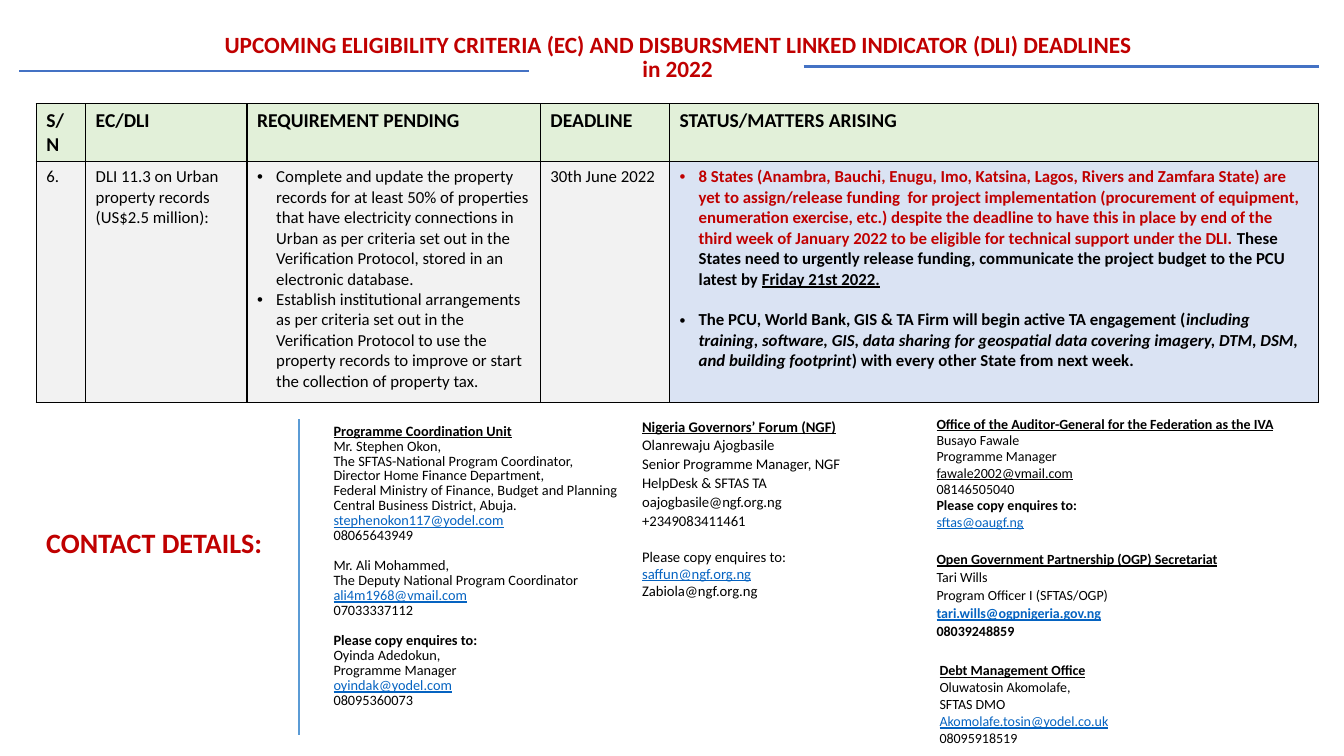
"""Build the slide of upcoming eligibility deadlines and programme contacts."""
from lxml.etree import SubElement
from pptx import Presentation
from pptx.dml.color import RGBColor
from pptx.enum.shapes import MSO_CONNECTOR
from pptx.enum.text import MSO_ANCHOR as Anchor, MSO_AUTO_SIZE as AutoSize, PP_ALIGN as Align
from pptx.oxml import parse_xml
from pptx.oxml.ns import nsdecls, qn
from pptx.util import Pt

PX = 9144
RED, BLACK, LINK = "C00000", "000000", "0563C1"


def color(hex_value):
    return RGBColor.from_string(hex_value)


def write(para, runs, size):
    """Add (text, style) runs; style letters: b bold, i italic, u underline, r red, l link."""
    for text, style in runs:
        span = para.add_run()
        span.text = text
        font = span.font
        font.name, font.size = "Calibri", Pt(size)
        font.bold, font.italic = "b" in style, "i" in style
        font.underline = "u" in style or "l" in style
        font.color.rgb = color(RED if "r" in style else LINK if "l" in style else BLACK)


deck = Presentation()
deck.slide_width, deck.slide_height = 1333 * PX, 750 * PX
page = deck.slides.add_slide(deck.slide_layouts[5])

title = page.shapes.title
title.left, title.top, title.width, title.height = 202 * PX, 28 * PX, 940 * PX, 60 * PX
frame = title.text_frame
frame.word_wrap, frame.auto_size = True, AutoSize.NONE
frame.vertical_anchor = Anchor.MIDDLE
heading = frame.paragraphs[0]
heading.alignment, heading.line_spacing = Align.CENTER, 0.86
write(heading, [("UPCOMING ELIGIBILITY CRITERIA (EC) AND DISBURSMENT LINKED INDICATOR (DLI) "
                 "DEADLINES in 2022", "br")], 16.6)

rules = [
    (19, 70, 525, 70, "4472C4"),
    (797, 66, 1308, 66, "4472C4"),
    (297, 416, 297, 729, "5B9BD5"),
]
for x1, y1, x2, y2, stroke in rules:
    rule = page.shapes.add_connector(MSO_CONNECTOR.STRAIGHT, x1 * PX, y1 * PX, x2 * PX, y2 * PX)
    rule.line.color.rgb, rule.line.width = color(stroke), Pt(1.5)
    SubElement(rule._element.spPr, qn("a:effectLst"))

headers = ["S/N", "EC/DLI", "REQUIREMENT PENDING", "DEADLINE", "STATUS/MATTERS ARISING"]
requirements = [
    [("Complete and update the property records for at least 50% of properties that have "
      "electricity connections in Urban as per criteria set out in the Verification Protocol, "
      "stored in an electronic database.", "")],
    [("Establish institutional arrangements as per criteria set out in the Verification Protocol "
      "to use the property records to improve or start the collection of property tax.", "")],
]
status = [
    [("8 States (Anambra, Bauchi, Enugu, Imo, Katsina, Lagos, Rivers and Zamfara State) are yet to "
      "assign/release funding  for project implementation (procurement of equipment, enumeration "
      "exercise, etc.) despite the deadline to have this in place by end of the third week of "
      "January 2022 to be eligible for technical support under the DLI. ", "br"),
     ("These States need to urgently release funding, communicate the project budget to the PCU "
      "latest by ", "b"),
     ("Friday 21st 2022.", "bu")],
    [("The PCU, World Bank, GIS & TA Firm will begin active TA engagement (", "b"),
     ("including training, software, GIS, data sharing for geospatial data covering imagery, DTM, "
      "DSM, and building footprint", "bi"),
     (") with every other State from next week.", "b")],
]
rows = [
    [[[(name, "b")]] for name in headers],
    [[[("6.", "")]],
     [[("DLI 11.3 on Urban property records (US$2.5 million):", "")]],
     requirements,
     [[("30th June 2022", "")]],
     status],
]
fills = [["E2F0D9"] * 5, ["F2F2F2"] * 4 + ["DAE3F3"]]

table = page.shapes.add_table(2, 5, 36 * PX, 103 * PX, 1272 * PX, 274 * PX).table
table.horz_banding = False
for column, width in zip(table.columns, [49, 160, 291, 128, 644]):
    column.width = width * PX
for row, height in zip(table.rows, [35, 239]):
    row.height = height * PX
for row_index, row in enumerate(rows):
    for column_index, paragraphs in enumerate(row):
        cell = table.cell(row_index, column_index)
        properties = cell._tc.get_or_add_tcPr()
        for side in ("lnL", "lnR", "lnT", "lnB"):
            properties.append(parse_xml(
                f'<a:{side} {nsdecls("a")} w="12700"><a:solidFill><a:srgbClr val="{BLACK}"/>'
                f'</a:solidFill></a:{side}>'))
        cell.fill.solid()
        cell.fill.fore_color.rgb = color(fills[row_index][column_index])
        for index, runs in enumerate(paragraphs):
            para = cell.text_frame.paragraphs[0] if index == 0 else cell.text_frame.add_paragraph()
            if len(paragraphs) > 1:
                para_properties = para._p.get_or_add_pPr()
                para_properties.set("marL", str(19 * PX))
                para_properties.set("indent", str(-19 * PX))
                SubElement(para_properties, qn("a:buFont"), typeface="Arial")
                SubElement(para_properties, qn("a:buChar"), char="•")
            if paragraphs is status and index:
                para.space_before = Pt(14.6)
            write(para, runs, 12 if row_index else 14)

contacts = [
    (321, 416, 304, 295, 10.2, Anchor.TOP, [
        (Align.JUSTIFY, 0.87, 0, [
            ("Programme Coordination Unit", "bu"),
            ("Mr. Stephen Okon,", ""),
            ("The SFTAS-National Program Coordinator,", ""),
            ("Director Home Finance Department,", ""),
            ("Federal Ministry of Finance, Budget and Planning", ""),
            ("Central Business District, Abuja.", ""),
            ("stephenokon117@yodel.com", "l"),
            ("08065643949", "")]),
        (Align.JUSTIFY, 0.87, 10.8, [
            ("Mr. Ali Mohammed,", ""),
            ("The Deputy National Program Coordinator", ""),
            ("ali4m1968@vmail.com", "l"),
            ("07033337112", "")]),
        (Align.JUSTIFY, 0.87, 10.8, [
            ("Please copy enquires to:", "b"),
            ("Oyinda Adedokun,", ""),
            ("Programme Manager", ""),
            ("oyindak@yodel.com", "l"),
            ("08095360073", "")])]),
    (627, 408, 245, 194, 10.5, Anchor.TOP, [
        (Align.LEFT, 1.07, 0, [
            ("Nigeria Governors’ Forum (NGF)", "bu"),
            ("Olanrewaju Ajogbasile", ""),
            ("Senior Programme Manager, NGF HelpDesk & SFTAS TA", ""),
            ("oajogbasile@ngf.org.ng", ""),
            ("+2349083411461", "")]),
        (Align.JUSTIFY, 0.97, 13.7, [
            ("Please copy enquires to:", ""),
            ("saffun@ngf.org.ng", "l"),
            ("Zabiola@ngf.org.ng", "")])]),
    (919, 408, 378, 143, 10, Anchor.TOP, [
        (Align.JUSTIFY, 0.97, 0, [
            ("Office of the Auditor-General for the Federation as the IVA", "bu"),
            ("Busayo Fawale", ""),
            ("Programme Manager", ""),
            ("fawale2002@vmail.com", "u"),
            ("08146505040", ""),
            ("Please copy enquires to:", "b"),
            ("sftas@oaugf.ng", "l")])]),
    (919, 540, 339, 117, 10, Anchor.TOP, [
        (Align.LEFT, 1.07, 0, [
            ("Open Government Partnership (OGP) Secretariat", "bu"),
            ("Tari Wills", ""),
            ("Program Officer I (SFTAS/OGP)", "")]),
        (Align.JUSTIFY, 1.07, 0, [
            ("tari.wills@ogpnigeria.gov.ng", "bl"),
            ("08039248859", "b")])]),
    (922, 640, 286, 117, 10, Anchor.MIDDLE, [
        (Align.LEFT, 1.0, 0, [("Debt Management Office", "bu")]),
        (Align.JUSTIFY, 1.0, 0, [
            ("Oluwatosin Akomolafe,", ""),
            ("SFTAS DMO", ""),
            ("Akomolafe.tosin@yodel.co.uk", "l"),
            ("08095918519", "")])]),
    (36, 516, 255, 44, 20, Anchor.TOP, [
        (Align.LEFT, 1.0, 0, [("CONTACT DETAILS:", "br")])]),
]
for left, top, width, height, size, anchor, groups in contacts:
    box = page.shapes.add_textbox(left * PX, top * PX, width * PX, height * PX)
    frame = box.text_frame
    frame.word_wrap, frame.vertical_anchor = True, anchor
    para = frame.paragraphs[0]
    for alignment, spacing, gap, lines in groups:
        for index, line in enumerate(lines):
            if para.runs:
                para = frame.add_paragraph()
            para.alignment, para.line_spacing = alignment, spacing
            if gap and index == 0:
                para.space_before = Pt(gap)
            write(para, [line], size)

deck.save("out.pptx")
